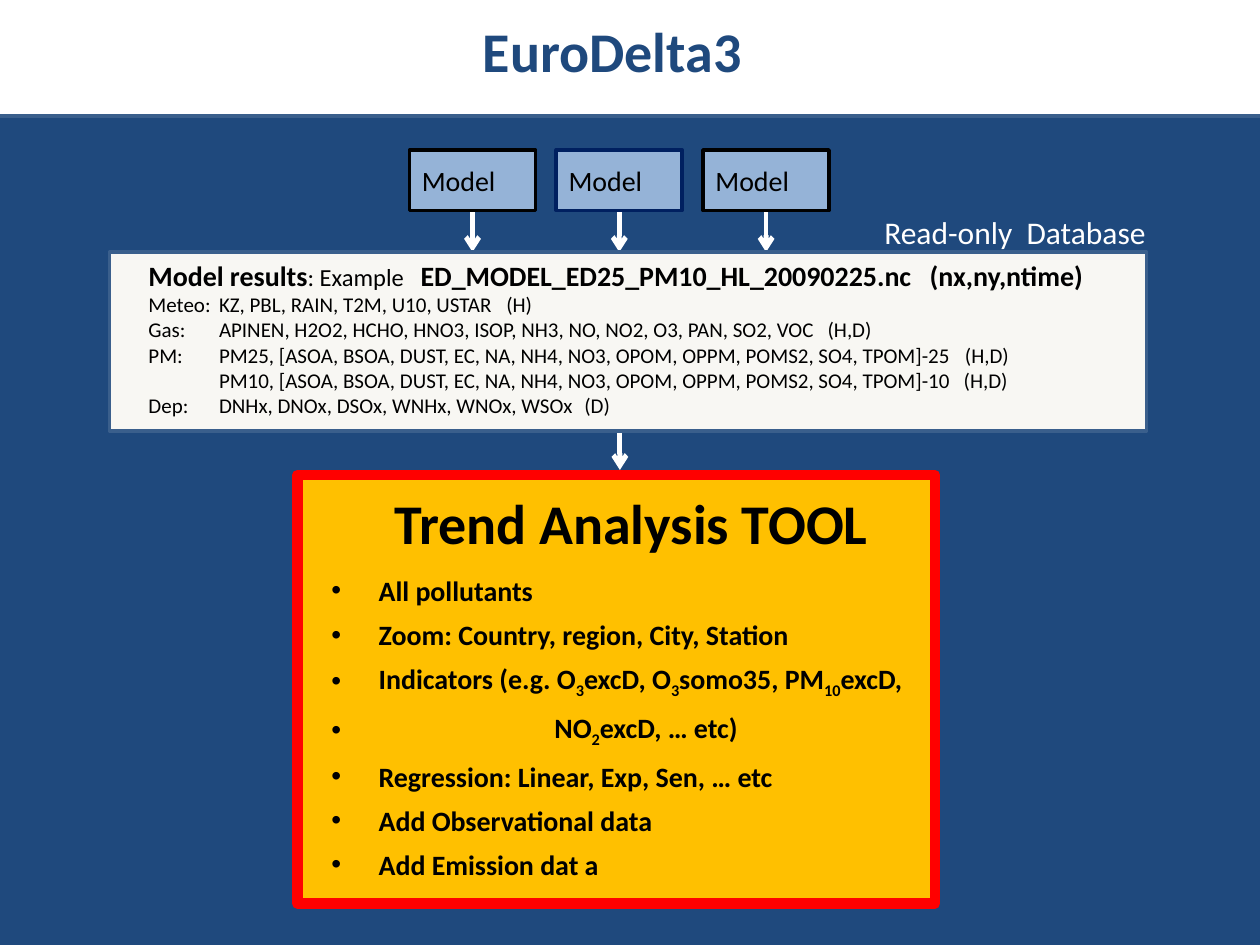
from dataclasses import dataclass

from lxml.etree import SubElement
from pptx import Presentation
from pptx.dml.color import RGBColor
from pptx.enum.shapes import MSO_CONNECTOR, MSO_SHAPE
from pptx.enum.text import MSO_ANCHOR, MSO_AUTO_SIZE, PP_ALIGN
from pptx.oxml.ns import qn
from pptx.util import Inches, Pt

COLUMNS, ROWS = 100, 75
SLIDE_WIDTH, SLIDE_HEIGHT = Inches(10), Inches(7.5)
COLORS = {
    "navy": "1F497D", "white": "FFFFFF", "black": "000000", "edge": "3A5F8C",
    "amber": "FFC000", "red": "FF0000", "sky": "95B3D7", "midnight": "002060",
    "paper": "F8F7F3",
}


@dataclass
class Frame:
    column: float
    row: float
    width: float
    height: float

    @property
    def center(self) -> float:
        return self.column + self.width / 2

    @property
    def bottom(self) -> float:
        return self.row + self.height

    def box(self) -> tuple:
        return (across(self.column), down(self.row), across(self.width), down(self.height))


@dataclass
class Bullet:
    texts: tuple
    indent: float = 3.75


@dataclass
class Species:
    label: str
    names: str
    interval: str
    interval_column: float


BANNER = Frame(-1.7, -0.8, 103.3, 10)
TOOL = Frame(23.6, 37.7, 50.6, 34)
RESULTS = Frame(8.7, 20, 82.3, 14.2)
FIRST_MODEL = Frame(32.5, 11.9, 10, 4.8)
MODEL_STEP = 11.65
MODEL_EDGES = ("black", "midnight", "black")
NAMES_COLUMN = 5.6

BULLETS = (
    Bullet(("All pollutants",)),
    Bullet(("Zoom: Country, region, City, Station",)),
    Bullet(("Indicators (e.g. O", "3", "excD, O", "3", "somo35, PM", "10", "excD,")),
    Bullet(("NO", "2", "excD, … etc)"), 17.7),
    Bullet(("Regression: Linear, Exp, Sen, … etc",)),
    Bullet(("Add Observational data",)),
    Bullet(("Add Emission dat a",)),
)
PARTICLES = "[ASOA, BSOA, DUST, EC, NA, NH4, NO3, OPOM, OPPM, POMS2, SO4, TPOM]"
SPECIES = (
    Species("Meteo:", "KZ, PBL, RAIN, T2M, U10, USTAR", "(H)", 28.4),
    Species("Gas:", "APINEN, H2O2, HCHO, HNO3, ISOP, NH3, NO, NO2, O3, PAN, SO2, VOC", "(H,D)", 53.9),
    Species("PM:", f"PM25, {PARTICLES}-25", "(H,D)", 64.8),
    Species("", f"PM10, {PARTICLES}-10", "(H,D)", 64.7),
    Species("Dep:", "DNHx, DNOx, DSOx, WNHx, WNOx, WSOx", "(D)", 34.6),
)


def across(columns: float) -> int:
    return round(SLIDE_WIDTH * columns / COLUMNS)


def down(rows: float) -> int:
    return round(SLIDE_HEIGHT * rows / ROWS)


def color(name: str) -> RGBColor:
    return RGBColor.from_string(COLORS[name])


def style(target, size: float, color_name: str = "black", bold: bool = False) -> None:
    font = target.font
    font.name, font.size, font.bold = "Calibri", Pt(size), bold
    font.color.rgb = color(color_name)


def add_panel(slide, frame: Frame, fill: str, edge: str, weight: float):
    shape = slide.shapes.add_shape(MSO_SHAPE.RECTANGLE, *frame.box())
    shape.shadow.inherit = False
    shape.fill.solid()
    shape.fill.fore_color.rgb = color(fill)
    shape.line.color.rgb = color(edge)
    shape.line.width = Pt(weight)
    return shape


def add_arrow(slide, column: float, top: float, bottom: float) -> None:
    arrow = slide.shapes.add_connector(
        MSO_CONNECTOR.STRAIGHT, across(column), down(top), across(column), down(bottom))
    arrow.line.color.rgb = color("white")
    arrow.line.width = Pt(2.75)
    SubElement(arrow.line._get_or_add_ln(), qn("a:tailEnd"), type="arrow")
    SubElement(arrow._element.spPr, qn("a:effectLst"))


def add_text_frame(slide, frame: Frame):
    text_frame = slide.shapes.add_textbox(*frame.box()).text_frame
    text_frame.word_wrap = False
    return text_frame


def place(placeholder, frame: Frame):
    placeholder.left, placeholder.top, placeholder.width, placeholder.height = frame.box()
    placeholder._element.getparent().append(placeholder._element)
    text_frame = placeholder.text_frame
    text_frame.word_wrap = False
    text_frame.auto_size = MSO_AUTO_SIZE.NONE
    return text_frame


def set_tabs(paragraph, *columns: float) -> None:
    tabs = SubElement(paragraph._p.get_or_add_pPr(), qn("a:tabLst"))
    for column in columns:
        SubElement(tabs, qn("a:tab"), pos=str(across(column)), algn="l")


def set_bullet(paragraph, indent: float, character: str = "") -> None:
    properties = paragraph._p.get_or_add_pPr()
    properties.set("marL", str(across(indent)))
    properties.set("indent", str(-across(indent)))
    if character:
        SubElement(properties, qn("a:buFont"), typeface="Arial")
        SubElement(properties, qn("a:buChar"), char=character)
    else:
        SubElement(properties, qn("a:buNone"))


def fill_tool(text_frame) -> None:
    text_frame.vertical_anchor = MSO_ANCHOR.TOP
    heading = text_frame.paragraphs[0]
    heading.text = "Trend Analysis TOOL"
    heading.alignment = PP_ALIGN.CENTER
    heading.space_before, heading.space_after = Pt(0), Pt(10)
    set_bullet(heading, 0)
    style(heading, 32, bold=True)
    for bullet in BULLETS:
        paragraph = text_frame.add_paragraph()
        paragraph.space_before, paragraph.space_after = Pt(0), Pt(6)
        set_bullet(paragraph, bullet.indent, "•")
        style(paragraph, 16, bold=True)
        for position, text in enumerate(bullet.texts):
            run = paragraph.add_run()
            run.text = text
            is_subscript = position % 2 == 1
            if is_subscript:
                run.font._element.set("baseline", "-25000")


def fill_results(text_frame) -> None:
    heading = text_frame.paragraphs[0]
    set_tabs(heading, 21.6, 62)
    for text, size, bold in (
        ("Model results", 16, True),
        (": Example\t", 14, False),
        ("ED_MODEL_ED25_PM10_HL_20090225.nc\t(nx,ny,ntime)", 16, True),
    ):
        run = heading.add_run()
        run.text = text
        style(run, size, bold=bold)
    for species in SPECIES:
        paragraph = text_frame.add_paragraph()
        paragraph.text = f"{species.label}\t{species.names}\t{species.interval}"
        set_tabs(paragraph, NAMES_COLUMN, species.interval_column)
        style(paragraph, 12)


def main() -> None:
    presentation = Presentation()
    presentation.slide_width, presentation.slide_height = SLIDE_WIDTH, SLIDE_HEIGHT
    slide = presentation.slides.add_slide(presentation.slide_layouts[1])
    slide.background.fill.solid()
    slide.background.fill.fore_color.rgb = color("navy")

    add_panel(slide, BANNER, "white", "edge", 2)
    add_panel(slide, TOOL, "amber", "red", 6)
    fill_tool(place(slide.placeholders[1], Frame(25.3, 38.3, 49.6, 31.6)))

    add_arrow(slide, 49.2, RESULTS.bottom, 37.3)
    for position, edge in enumerate(MODEL_EDGES):
        frame = Frame(FIRST_MODEL.column + position * MODEL_STEP, FIRST_MODEL.row,
                      FIRST_MODEL.width, FIRST_MODEL.height)
        add_arrow(slide, frame.center, frame.bottom, RESULTS.row)
        model = add_panel(slide, frame, "sky", edge, 2)
        model.text_frame.text = "Model"
        style(model.text_frame.paragraphs[0], 16)

    add_panel(slide, RESULTS, "paper", "edge", 2)
    fill_results(add_text_frame(slide, Frame(10.8, 20, 77.2, 13.8)))

    database = add_text_frame(slide, Frame(69.2, 16.4, 23, 4)).paragraphs[0]
    database.text = "Read-only  Database"
    style(database, 18, "white")

    title = place(slide.shapes.title, Frame(37.2, 0.8, 22.8, 6.4)).paragraphs[0]
    title.text = "EuroDelta3"
    style(title, 32, "navy", bold=True)

    presentation.save("out.pptx")


if __name__ == "__main__":
    main()
